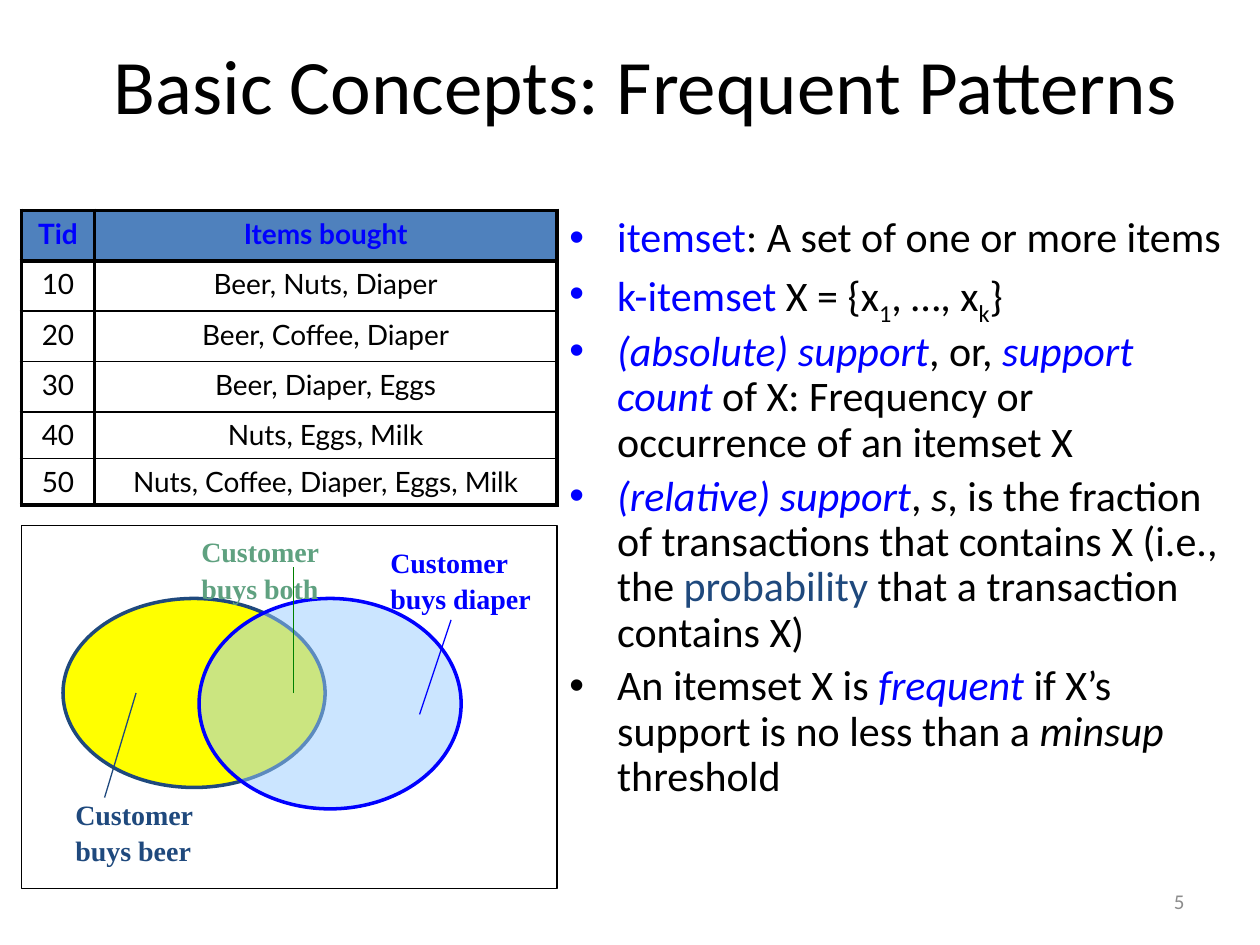
from lxml import etree
from pptx import Presentation
from pptx import util as u
from pptx.dml.color import RGBColor
from pptx.enum import shapes, text
from pptx.oxml.ns import qn

BLACK, BLUE, NAVY = "000000", "0000FF", "1F497D"


def paint(target, color):
    """Give a fill, or the fill of a line or font, one solid colour."""
    fill = getattr(target, "fill", target)
    fill.solid()
    fill.fore_color.rgb = RGBColor.from_string(color)


def style(font, size, color, name="Calibri", bold=False, italic=False):
    font.size, font.name, font.bold, font.italic = u.Pt(size), name, bold, italic
    paint(font, color)


prs = Presentation()
prs.slide_width, prs.slide_height = u.Inches(10), u.Inches(7.5)
slide = prs.slides.add_slide(prs.slide_layouts[6])

# Title and slide number
for content, box, size, color, align in [
    ("Basic Concepts: Frequent Patterns", (0.75, 0.25, 8.75, 0.83), 44, BLACK, text.PP_ALIGN.CENTER),
    ("5", (7.17, 6.95, 2.33, 0.4), 12, "8C8C8C", text.PP_ALIGN.RIGHT),
]:
    frame = slide.shapes.add_textbox(*map(u.Inches, box)).text_frame
    frame.word_wrap = True
    frame.vertical_anchor = text.MSO_ANCHOR.MIDDLE
    frame.text = content
    frame.paragraphs[0].alignment = align
    style(frame.paragraphs[0].runs[0].font, size, color)

# Definitions: each run is text, colour, italic, baseline in percent
definitions = [
    [("itemset", BLUE, False, 0), (": A set of one or more items", BLACK, False, 0)],
    [("k-itemset", BLUE, False, 0), (" X = {x", BLACK, False, 0), ("1", BLACK, False, -25),
     (", …, x", BLACK, False, 0), ("k", BLACK, False, -25), ("}", BLACK, False, 0)],
    [("(absolute) support", BLUE, True, 0), (", or, ", BLACK, False, 0),
     ("support count", BLUE, True, 0),
     (" of X: Frequency or occurrence of an itemset X", BLACK, False, 0)],
    [("(relative) support", BLUE, True, 0), (", ", BLACK, False, 0), ("s", BLACK, True, 0),
     (", is the fraction of transactions that contains X (i.e., the ", BLACK, False, 0),
     ("probability", NAVY, False, 0), (" that a transaction contains X)", BLACK, False, 0)],
    [("An itemset X is ", BLACK, False, 0), ("frequent", BLUE, True, 0),
     (" if X’s support is no less than a ", BLACK, False, 0), ("minsup", BLACK, True, 0),
     (" threshold", BLACK, False, 0)],
]
body = slide.shapes.add_textbox(*map(u.Inches, (4.42, 1.67, 5.42, 5.42))).text_frame
body.word_wrap = True
for i, definition in enumerate(definitions):
    paragraph = body.add_paragraph() if i else body.paragraphs[0]
    paragraph.line_spacing, paragraph.space_before = 0.9, u.Pt(4.8)
    props = paragraph._p.get_or_add_pPr()
    props.set("marL", str(u.Inches(0.38)))
    props.set("indent", str(u.Inches(-0.38)))
    etree.SubElement(props, qn("a:buFont")).set("typeface", "Arial")
    etree.SubElement(props, qn("a:buChar")).set("char", "•")
    for words, color, italic, baseline in definition:
        run = paragraph.add_run()
        run.text = words
        style(run.font, 24, color, italic=italic)
        if baseline:
            run.font._element.set("baseline", str(baseline * 1000))

# Venn diagram
for box, color, outline, opacity in [
    ((0.5, 4.75, 2.08, 1.5), "FFFF00", NAVY, 100),
    ((1.58, 4.75, 2.08, 1.67), "99CCFF", BLUE, 50),
]:
    customers = slide.shapes.add_shape(shapes.MSO_SHAPE.OVAL, *map(u.Inches, box))
    customers.shadow.inherit = False
    paint(customers, color)
    paint(customers.line, outline)
    customers.line.width = u.Pt(2)
    if opacity < 100:
        tint = customers.fill._xPr.find(qn("a:solidFill"))[0]
        etree.SubElement(tint, qn("a:alpha")).set("val", str(opacity * 1000))

for ends, color in [
    ((1.08, 5.5, 0.83, 6.33), NAVY),
    ((3.33, 5.67, 3.58, 4.92), BLUE),
    ((2.33, 5.5, 2.33, 4.5), "008000"),
]:
    leader = slide.shapes.add_connector(shapes.MSO_CONNECTOR.STRAIGHT, *map(u.Inches, ends))
    paint(leader.line, color)
    leader.line.width = u.Pt(0.75)
    etree.SubElement(leader._element.spPr, qn("a:effectLst"))

for bought, left, top, width, color, wrap in [
    ("diaper", 3, 4.25, 1.33, BLUE, True),
    ("both", 1.5, 4.17, 1.14, "5FA180", True),
    ("beer", 0.5, 6.25, 1.14, NAVY, False),
]:
    label = slide.shapes.add_textbox(*map(u.Inches, (left, top, width, 0.69))).text_frame
    label.word_wrap = wrap
    label.auto_size = text.MSO_AUTO_SIZE.SHAPE_TO_FIT_TEXT
    label.text = f"Customer\nbuys {bought}"
    for paragraph in label.paragraphs:
        paragraph.line_spacing = 1.1
        style(paragraph.runs[0].font, 16, color, "Times New Roman", bold=True)

border = slide.shapes.add_shape(shapes.MSO_SHAPE.RECTANGLE, *map(u.Inches, (0.17, 4.17, 4.25, 2.88)))
border.shadow.inherit = False
border.fill.background()
paint(border.line, BLACK)
border.line.width = u.Pt(0.75)

# Transactions
transactions = [
    ("Tid", "Items bought"),
    ("10", "Beer, Nuts, Diaper"),
    ("20", "Beer, Coffee, Diaper"),
    ("30", "Beer, Diaper, Eggs"),
    ("40", "Nuts, Eggs, Milk"),
    ("50", "Nuts, Coffee, Diaper, Eggs, Milk"),
]
last = len(transactions) - 1
table = slide.shapes.add_table(
    len(transactions), 2, *map(u.Inches, (0.17, 1.67, 4.25, 2.33))).table
table.first_row = table.horz_banding = False
for column, width in zip(table.columns, (0.58, 3.67)):
    column.width = u.Inches(width)
for r, transaction in enumerate(transactions):
    table.rows[r].height = u.Inches(0.4 if r < 4 else 0.37)
    for c, content in enumerate(transaction):
        cell = table.cell(r, c)
        cell.text = content
        paragraph = cell.text_frame.paragraphs[0]
        paragraph.alignment = text.PP_ALIGN.CENTER
        paragraph.space_before = u.Pt(3.2)
        style(paragraph.runs[0].font, 16, BLACK if r else BLUE, "Lato", bold=r == 0)
        props = cell._tc.get_or_add_tcPr()
        for side, points in [("L", 2.25), ("R", 2.25), ("T", 2.25 if r < 2 else 1),
                             ("B", 2.25 if r in (0, last) else 1)]:
            edge = etree.SubElement(props, qn(f"a:ln{side}"), w=str(u.Pt(points)))
            solid = etree.SubElement(edge, qn("a:solidFill"))
            etree.SubElement(solid, qn("a:srgbClr")).set("val", BLACK)
        if r:
            cell.fill.background()
        else:
            paint(cell, "4F81BD")

prs.save("out.pptx")
